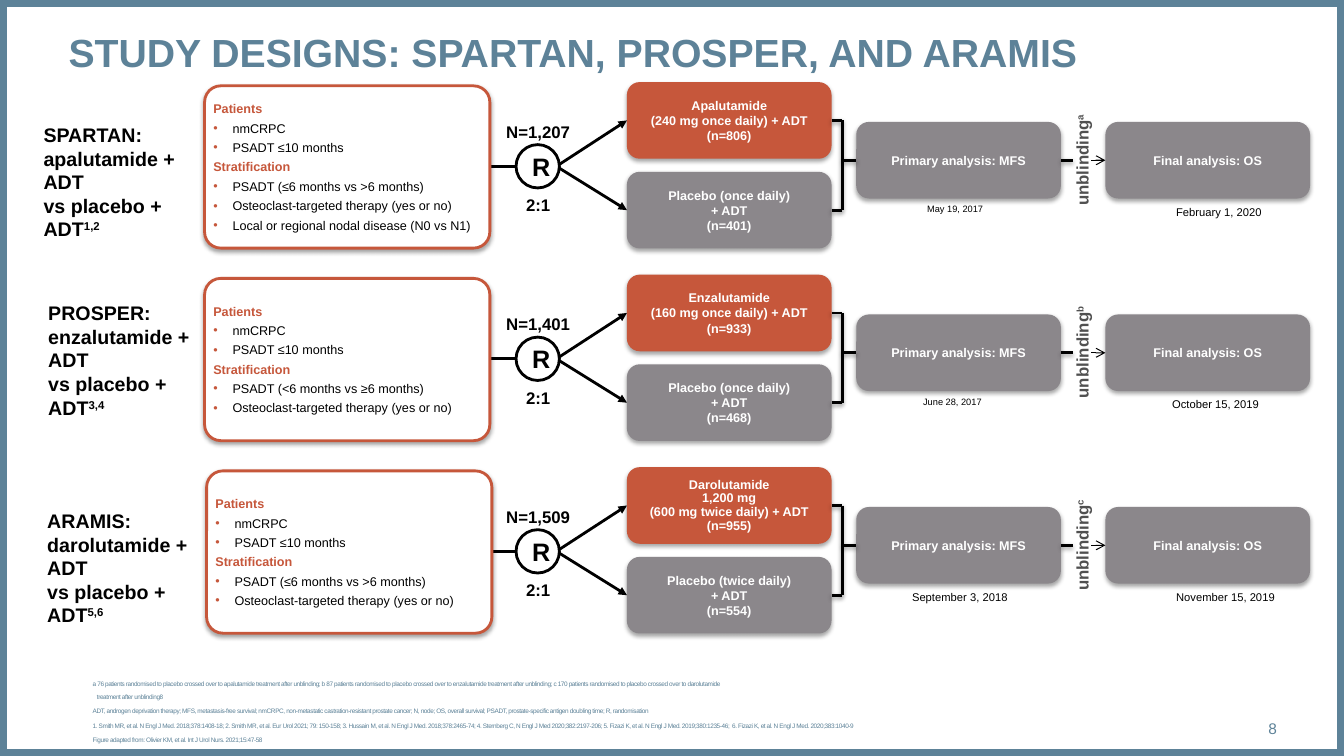
from dataclasses import dataclass
from typing import Any, NamedTuple

from lxml import etree
from pptx import Presentation
from pptx.dml.color import RGBColor
from pptx.enum.shapes import MSO_CONNECTOR, MSO_SHAPE
from pptx.enum.text import MSO_ANCHOR, MSO_AUTO_SIZE, PP_ALIGN
from pptx.oxml.ns import qn
from pptx.util import Emu, Inches, Pt

RECT, ROUNDED, CIRCLE = MSO_SHAPE.RECTANGLE, MSO_SHAPE.ROUNDED_RECTANGLE, MSO_SHAPE.OVAL
STRAIGHT = MSO_CONNECTOR.STRAIGHT
TOP, MIDDLE, BOTTOM = MSO_ANCHOR.TOP, MSO_ANCHOR.MIDDLE, MSO_ANCHOR.BOTTOM
LEFT, CENTER, RIGHT = PP_ALIGN.LEFT, PP_ALIGN.CENTER, PP_ALIGN.RIGHT
FIT, NO_FIT = MSO_AUTO_SIZE.SHAPE_TO_FIT_TEXT, MSO_AUTO_SIZE.NONE
LEFT_SIDE, RIGHT_SIDE = 1, 3


class Shadow(NamedTuple):
    opacity: int
    blur: float
    distance: float


@dataclass(frozen=True)
class Theme:
    font: str = "Arial"
    steel: str = "5D8298"
    rust: str = "C6573B"
    grey: str = "8B878B"
    dark: str = "505050"
    black: str = "000000"
    white: str = "FFFFFF"
    title: float = 28
    symbol: float = 18
    label: float = 14
    count: float = 12
    page: float = 11
    box: float = 9
    small: float = 8
    tiny: float = 6.6
    footnote: float = 4.64
    footnote_pitch: float = 9.4
    box_shadow: Shadow = Shadow(35, 3.1, 1.8)
    line_shadow: Shadow = Shadow(38, 3.1, 1.6)


class Run(NamedTuple):
    text: str
    baseline: int | None = None


class Area(NamedTuple):
    """Left, top, width and height in grid cells."""
    x: float
    y: float
    w: float
    h: float


@dataclass(frozen=True)
class Trial:
    name: str
    regimen: str
    references: str
    label_x: float
    label_dy: float
    criteria_x: float
    strata: tuple[str, ...]
    enrolled: str
    treatment: str
    treatment_spacing: float
    placebo: str
    note: str
    primary_date: str
    primary_date_x: float
    primary_date_size: float
    final_date: str
    final_date_x: float


THEME = Theme()
OSTEOCLAST = "Osteoclast-targeted therapy (yes or no)"
TRIALS = (
    Trial("SPARTAN:", "apalutamide", "1,2", 4, 4.26, 24.36,
          ("PSADT (≤6 months vs >6 months)", OSTEOCLAST, "Local or regional nodal disease (N0 vs N1)"),
          "N=1,207", "Apalutamide\n(240 mg once daily) + ADT\n(n=806)", 1,
          "Placebo (once daily)\n+ ADT\n(n=401)", "a",
          "May 19, 2017", 109.2, THEME.tiny, "February 1, 2020", 138.84),
    Trial("PROSPER:", "enzalutamide", "3,4", 4.56, 2.58, 24.36,
          ("PSADT (<6 months vs ≥6 months)", OSTEOCLAST),
          "N=1,401", "Enzalutamide\n(160 mg once daily) + ADT\n(n=933)", 1,
          "Placebo (once daily)\n+ ADT\n(n=468)", "b",
          "June 28, 2017", 108.72, THEME.tiny, "October 15, 2019", 138.36),
    Trial("ARAMIS:", "darolutamide", "5,6", 4.44, 4.38, 24.6,
          ("PSADT (≤6 months vs >6 months)", OSTEOCLAST),
          "N=1,509", "Darolutamide\n1,200 mg\n(600 mg twice daily) + ADT\n(n=955)", 0.9,
          "Placebo (twice daily)\n+ ADT\n(n=554)", "c",
          "September 3, 2018", 107.4, THEME.small, "November 15, 2019", 138.84),
)
FOOTNOTES = (
    "a 76 patients randomised to placebo crossed over to apalutamide treatment after unblinding; b 87 patients randomised to placebo crossed over to enzalutamide treatment after unblinding; c 170 patients randomised to placebo crossed over to darolutamide\n   treatment after unblinding8",
    "ADT, androgen deprivation therapy; MFS, metastasis-free survival; nmCRPC, non-metastatic castration-resistant prostate cancer; N, node; OS, overall survival; PSADT, prostate-specific antigen doubling time; R, randomisation",
    "1. Smith MR, et al. N Engl J Med. 2018;378:1408-18; 2. Smith MR, et al. Eur Urol 2021; 79: 150-158; 3. Hussain M, et al. N Engl J Med. 2018;378:2465-74; 4. Sternberg C, N Engl J Med 2020;382:2197-206; 5. Fizazi K, et al. N Engl J Med. 2019;380:1235-46;  6. Fizazi K, et al. N Engl J Med. 2020;383:1040-9",
    "Figure adapted from: Olivier KM, et al. Int J Urol Nurs. 2021;15:47-58",
)

deck = Presentation()
deck.slide_width, deck.slide_height = Inches(13.333), Inches(7.5)
slide = deck.slides.add_slide(deck.slide_layouts[1])
COLUMNS, ROWS = 160, 90
FIRST_BAND, BAND_PITCH = 9.78, 22.92
AXIS, ARM_H, ARM_GAP, ANALYSIS_DY = 10.02, 9.12, 1.56, 4.74


def across(cells: float) -> Emu:
    return Emu(round(deck.slide_width * cells / COLUMNS))


def down(cells: float) -> Emu:
    return Emu(round(deck.slide_height * cells / ROWS))


def place(area: Area) -> tuple[Emu, Emu, Emu, Emu]:
    return across(area.x), down(area.y), across(area.w), down(area.h)


def apply(target: Any, **values: Any) -> None:
    for attribute, value in values.items():
        setattr(target, attribute, value)


def setup(frame: Any, inset: float = 0, anchor: Any = MIDDLE, wrap: bool = True, fit: Any = NO_FIT) -> None:
    apply(frame, auto_size=fit, word_wrap=wrap, vertical_anchor=anchor, margin_left=Inches(inset),
          margin_right=Inches(inset), margin_top=Inches(inset / 2), margin_bottom=Inches(inset / 2))


def write(frame: Any, runs: tuple[Run, ...], size: float, color: str, bold: bool = True,
          align: Any = LEFT, tracking: int = 0, **spacing: Any) -> Any:
    """Fill the first free paragraph of the frame and return it."""
    paragraph = frame.add_paragraph() if frame.text else frame.paragraphs[0]
    apply(paragraph, alignment=align, **spacing)
    for piece in runs:
        for index, line in enumerate(piece.text.split("\n")):
            if index:
                paragraph.add_line_break()
            run = paragraph.add_run()
            run.text = line
            apply(run.font, name=THEME.font, size=Pt(size), bold=bold)
            run.font.color.rgb = RGBColor.from_string(color)
            if piece.baseline is not None:
                run.font._element.set("baseline", str(piece.baseline * 1000))
            if tracking:
                run.font._element.set("spc", str(tracking))
    return paragraph


def mark(paragraph: Any, indent: float = 0, bullet: str | None = None) -> None:
    """Set the hanging indent and the bullet, or remove the bullet."""
    properties = paragraph._p.get_or_add_pPr()
    for key, value in {"marL": Inches(indent), "indent": -Inches(indent)}.items():
        properties.set(key, str(int(value)))
    if bullet:
        tint = etree.SubElement(properties, qn("a:buClr"))
        etree.SubElement(tint, qn("a:srgbClr"), val=THEME.rust)
        etree.SubElement(properties, qn("a:buFont"), typeface=THEME.font)
        etree.SubElement(properties, qn("a:buChar"), char=bullet)
    else:
        etree.SubElement(properties, qn("a:buNone"))


def cast_shadow(effects: Any, shadow: Shadow) -> None:
    outer = etree.SubElement(effects, qn("a:outerShdw"), blurRad=str(Pt(shadow.blur)),
                             dist=str(Pt(shadow.distance)), dir="5400000", algn="t", rotWithShape="0")
    tint = etree.SubElement(outer, qn("a:srgbClr"), val=THEME.black)
    etree.SubElement(tint, qn("a:alpha"), val=str(shadow.opacity * 1000))


def panel(kind: Any, area: Area, fill: str | None, line: str | None = None, weight: float = 2,
          shadow: Shadow | None = None) -> Any:
    shape = slide.shapes.add_shape(kind, *place(area))
    shape.shadow.inherit = False
    for part, color in ((shape.fill, fill), (shape.line.fill, line)):
        if color:
            part.solid()
            part.fore_color.rgb = RGBColor.from_string(color)
        else:
            part.background()
    if line:
        shape.line.width = Pt(weight)
    if shadow:
        cast_shadow(shape._element.spPr.find(qn("a:effectLst")), shadow)
    setup(shape.text_frame)
    return shape


def box(area: Area, fill: str, text: str, line_spacing: float = 1) -> Any:
    shape = panel(ROUNDED, area, fill, shadow=THEME.box_shadow)
    write(shape.text_frame, (Run(text),), THEME.box, THEME.white, align=CENTER, line_spacing=line_spacing)
    return shape


def caption(area: Area, runs: tuple[Run, ...], size: float, color: str = THEME.black, bold: bool = True,
            align: Any = LEFT, wrap: bool = True, fit: Any = NO_FIT, **spacing: Any) -> Any:
    shape = slide.shapes.add_textbox(*place(area))
    setup(shape.text_frame, 0.1, TOP, wrap, fit)
    write(shape.text_frame, runs, size, color, bold, align, **spacing)
    return shape


def link(start: tuple[float, float], end: tuple[float, float], begin: Any = None, finish: Any = None,
         weight: float = 2, head: str | None = None, shadow: Shadow | None = None) -> None:
    """Draw a line, joined to begin's right side or finish's left side when given."""
    line = slide.shapes.add_connector(STRAIGHT, across(start[0]), down(start[1]), across(end[0]), down(end[1]))
    line.line.color.rgb = RGBColor.from_string(THEME.black)
    line.line.width = Pt(weight)
    if begin:
        line.begin_connect(begin, RIGHT_SIDE)
    if finish:
        line.end_connect(finish, LEFT_SIDE)
    if head:
        etree.SubElement(line.line._get_or_add_ln(), qn("a:tailEnd"), type=head)
    effects = etree.SubElement(line._element.spPr, qn("a:effectLst"))
    if shadow:
        cast_shadow(effects, shadow)


def draw_criteria(trial: Trial, top: float) -> None:
    criteria = panel(ROUNDED, Area(trial.criteria_x, top + 0.44, 33.96, 19.32), THEME.white,
                     THEME.rust, shadow=THEME.box_shadow)
    criteria.adjustments[0] = 0.1
    frame = criteria.text_frame
    frame.margin_left = Inches(0.04)
    for heading, items in (("Patients", ("nmCRPC", "PSADT ≤10 months")), ("Stratification", trial.strata)):
        write(frame, (Run(heading),), THEME.box, THEME.rust, space_before=Pt(3 if frame.text else 0))
        for item in items:
            mark(write(frame, (Run(item),), THEME.box, THEME.black, False, space_before=Pt(3)), 0.19, "•")


def draw_trial(trial: Trial, top: float) -> None:
    axis, analysis_top = top + AXIS, top + ANALYSIS_DY
    label = caption(Area(trial.label_x, top + trial.label_dy, 20.3, 15.36), (Run(trial.name),), THEME.label, fit=FIT)
    write(label.text_frame, (Run(f"{trial.regimen} + ADT \nvs placebo + ADT"), Run(trial.references, 30)),
          THEME.label, THEME.black)

    link((56.64, axis), (65.52, axis))
    draw_criteria(trial, top)
    for text, dy in ((trial.enrolled, 4.08), ("2:1", 12.84)):
        caption(Area(59.04, top + dy, 10.08, 3.6), (Run(text),), THEME.count, align=CENTER, wrap=False, fit=FIT)

    spine, spine_ends = 100.26, []
    arms = ((trial.treatment, THEME.rust, trial.treatment_spacing), (trial.placebo, THEME.grey, 1))
    for index, (text, fill, line_spacing) in enumerate(arms):
        arm_top = top + index * (ARM_H + ARM_GAP)
        middle = arm_top + ARM_H / 2
        arm = box(Area(74.64, arm_top, 24.36, ARM_H), fill, text, line_spacing)
        link((66.24, axis), (74.64, middle), finish=arm, head="triangle")
        link((99, middle), (spine, middle), begin=arm, shadow=THEME.line_shadow)
        spine_ends.append((spine, middle))
    link(*spine_ends, shadow=THEME.line_shadow)
    randomisation = panel(CIRCLE, Area(61.44, axis - 2.58, 5.16, 5.16), THEME.white, THEME.black)
    randomisation.text_frame.word_wrap = False
    randomisation.text_frame.margin_left = Inches(0.07)
    write(randomisation.text_frame, (Run("R"),), THEME.symbol, THEME.black, align=CENTER)

    primary, final = (box(Area(x, analysis_top, 24.36, ARM_H), THEME.grey, text)
                      for x, text in ((101.94, "Primary analysis: MFS"), (131.6, "Final analysis: OS")))
    middle = analysis_top + ARM_H / 2
    link((spine, middle), (101.94, middle), finish=primary, shadow=THEME.line_shadow)
    link((126.3, middle), (127.74, middle), begin=primary, shadow=THEME.line_shadow)
    link((129.9, middle), (131.6, middle), finish=final, weight=0.75, head="arrow")
    caption(Area(122.1, top + 7.38, 13.44, 3.6), (Run("unblinding"), Run(trial.note, 30)), THEME.count,
            THEME.dark, wrap=False, fit=FIT).rotation = 270
    for text, x, size in ((trial.primary_date, trial.primary_date_x, trial.primary_date_size),
                          (trial.final_date, trial.final_date_x, THEME.small)):
        caption(Area(x, top + 14.22, 16.08, 3), (Run(text),), size, bold=False,
                line_spacing=0.7 if size == THEME.tiny else 0.9)


def main() -> None:
    panel(RECT, Area(0, 0, COLUMNS, ROWS), None, THEME.steel, 10)
    title, footnotes = slide.shapes.title, slide.placeholders[1]
    for holder, area, anchor in ((title, Area(8.16, 3.36, 143.88, 11.28), TOP),
                                 (footnotes, Area(11.04, 82, 138.96, 6.6), BOTTOM)):
        apply(holder, **dict(zip(("left", "top", "width", "height"), place(area))))
        setup(holder.text_frame, anchor=anchor)
    write(title.text_frame, (Run("STUDY DESIGNS: SPARTAN, PROSPER, AND ARAMIS"),), THEME.title, THEME.steel)
    for note in FOOTNOTES:
        mark(write(footnotes.text_frame, (Run(note),), THEME.footnote, THEME.steel, False, tracking=-30,
                   space_before=Pt(0), space_after=Pt(1), line_spacing=Pt(THEME.footnote_pitch)))
    for index, trial in enumerate(TRIALS):
        draw_trial(trial, FIRST_BAND + index * BAND_PITCH)
    page = caption(Area(141.72, 84.36, 10.32, 4.8), (Run("8"),), THEME.page, THEME.steel, False, RIGHT)
    setup(page.text_frame)
    deck.save("out.pptx")


if __name__ == "__main__":
    main()
